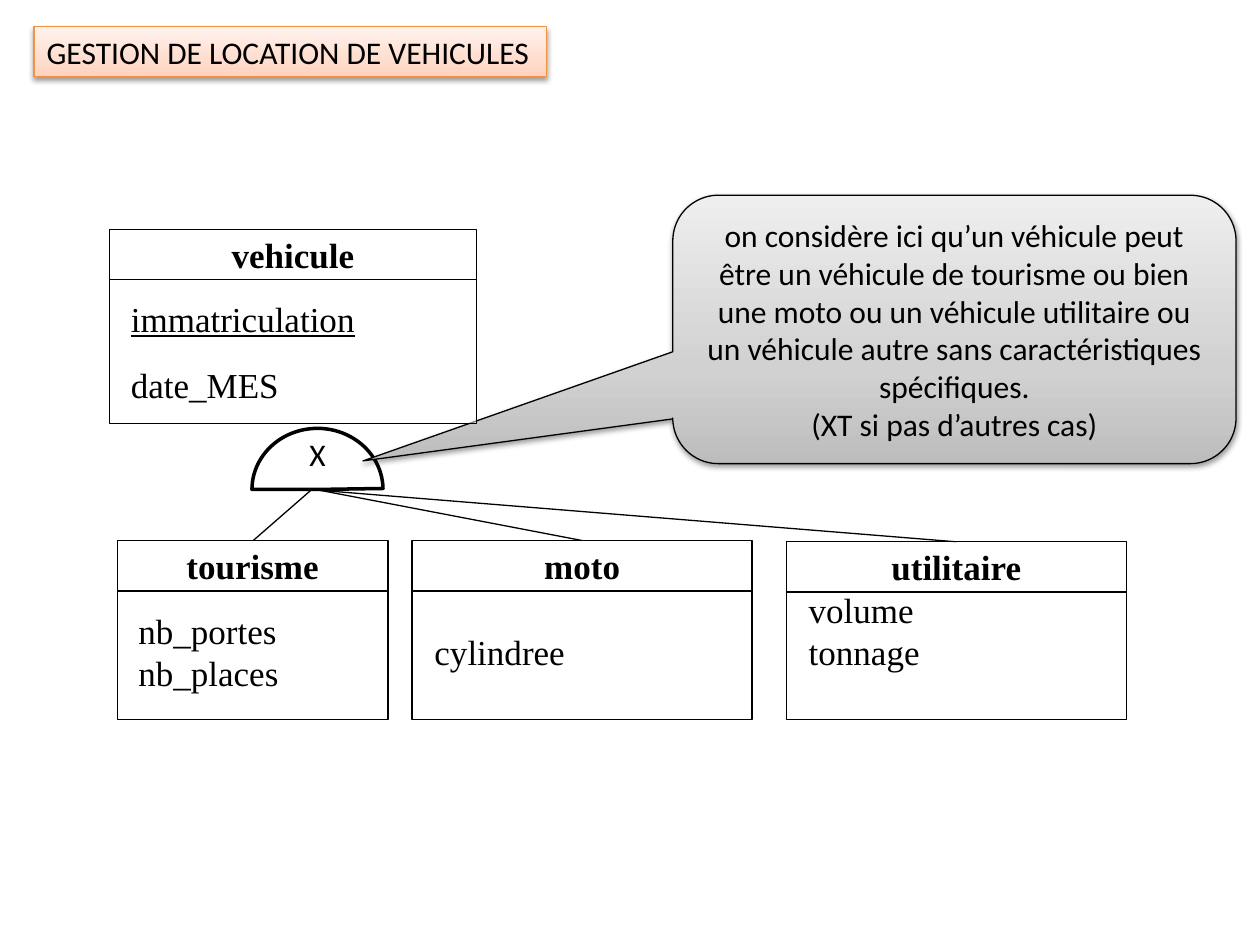
import copy
import lxml.etree
import pptx
import pptx.dml.color
import pptx.enum.shapes
import pptx.enum.text
import pptx.oxml.ns
import pptx.util

Inches, Pt = pptx.util.Inches, pptx.util.Pt
Kind = pptx.enum.shapes.MSO_SHAPE
Align = pptx.enum.text.PP_ALIGN
Anchor = pptx.enum.text.MSO_ANCHOR
qn = pptx.oxml.ns.qn

TITLE = "GESTION DE LOCATION DE VEHICULES"
NOTE = (
    "on considère ici qu’un véhicule peut être un véhicule de tourisme ou bien "
    "une moto ou un véhicule utilitaire ou un véhicule autre sans "
    "caractéristiques spécifiques.\n(XT si pas d’autres cas)"
)
HEAD, ROW = 0.4, 0.33
ENTITIES = [
    ("vehicule", (0.87, 1.82, 2.91, 1.54),
     [("immatriculation", 0.94, 2.29, 2.76, 0.47, 0),
      ("date_MES", 0.94, 2.82, 2.76, 0.47, 0)]),
    ("tourisme", (0.93, 4.29, 2.15, 1.42),
     [("nb_portes\nnb_places", 1, 4.99, 2.04, 0.69, 1)]),
    ("moto", (3.27, 4.29, 2.7, 1.42),
     [("cylindree", 3.35, 4.99, 2.56, 0.69, 1)]),
    ("utilitaire", (6.24, 4.3, 2.7, 1.41),
     [("volume\ntonnage", 6.32, 4.99, 2.56, 0.69, 2)]),
]
KEY = "immatriculation"
LINKS = [(2.48, 3.88, 2.01, 4.29), (2.48, 3.88, 4.62, 4.29), (2.52, 3.89, 7.59, 4.3)]
GRAY = [(0, "BDBDBD"), (0.35, "D1D1D1"), (1, "EEEEEE")]
PEACH = [(0, "FFD2BD"), (0.35, "FFDED0"), (1, "FFF2ED")]


def color(code):
    return pptx.dml.color.RGBColor.from_string(code)


def edge(shape, code="000000", width=0.75):
    shape.line.color.rgb = color(code)
    shape.line.width = Pt(width)


def paint(shape, alpha=None):
    shape.fill.solid()
    shape.fill.fore_color.rgb = color("FFFFFF")
    if alpha:
        tint = shape.fill._xPr.find(".//" + qn("a:srgbClr"))
        lxml.etree.SubElement(tint, qn("a:alpha"), val=str(alpha * 1000))


def blend(shape, stops):
    shape.fill.gradient()
    shape.fill.gradient_angle = 90
    first = shape._element.spPr.find(".//" + qn("a:gs"))
    first.addnext(copy.deepcopy(first))
    for stop, (place, code) in zip(shape.fill.gradient_stops, stops):
        stop.position = place
        stop.color.rgb = color(code)


def shade(shape):
    shape.shadow.inherit = False
    effects = shape._element.spPr.find(qn("a:effectLst"))
    outer = lxml.etree.SubElement(
        effects, qn("a:outerShdw"), blurRad="40000", dist="20000",
        dir="5400000", rotWithShape="0")
    tint = lxml.etree.SubElement(outer, qn("a:srgbClr"), val="000000")
    lxml.etree.SubElement(tint, qn("a:alpha"), val="38000")


def write(shape, text, font="Calibri", size=18, align=Align.CENTER,
          anchor=Anchor.MIDDLE, wrap=True, bold=False):
    frame = shape.text_frame
    frame.text = text
    frame.word_wrap = wrap
    frame.vertical_anchor = anchor
    for para in frame.paragraphs:
        para.alignment = align
        for run in para.runs:
            run.font.name = font
            run.font.size = Pt(size)
            run.font.bold = bold
            run.font.underline = text == KEY
            run.font.color.rgb = color("000000")


def add(parent, kind, *box):
    shape = parent.add_shape(kind, *map(Inches, box))
    shape.shadow.inherit = False
    return shape


def entity(shapes, name, box, labels):
    left, top, width, height = box
    group = shapes.add_group_shape().shapes
    body = add(group, Kind.RECTANGLE, left, top + HEAD, width, height - HEAD)
    head = add(group, Kind.RECTANGLE, left, top, width, HEAD)
    for part in (body, head):
        paint(part, 50)
        edge(part)
    write(head, name, "Times New Roman", 20, wrap=False, bold=True)
    for text, *place, blank in labels:
        label = add(group, Kind.RECTANGLE, *place)
        paint(label, 50)
        label.line.fill.background()
        write(label, text, "Times New Roman", 20, Align.LEFT, wrap=False)
        label.text_frame.margin_top = 0
        label.text_frame.margin_bottom = Inches(ROW * blank)


def main():
    deck = pptx.Presentation()
    deck.slide_width, deck.slide_height = Inches(10), Inches(7.5)
    slide = deck.slides.add_slide(deck.slide_layouts[5])
    shapes = slide.shapes

    title = shapes.title
    title.left, title.top, title.width, title.height = map(
        Inches, (0.27, 0.21, 4.07, 0.4))
    blend(title, PEACH)
    edge(title, "F69240")
    shade(title)
    write(title, TITLE, align=Align.LEFT, anchor=Anchor.TOP, wrap=False)

    for ends in LINKS:
        link = shapes.add_connector(
            pptx.enum.shapes.MSO_CONNECTOR.STRAIGHT, *map(Inches, ends))
        edge(link)
        lxml.etree.SubElement(link._element.spPr, qn("a:effectLst"))

    pie = add(shapes, Kind.PIE, 2, 3.4, 1.04, 0.97)
    pie.adjustments[0], pie.adjustments[1] = 108, 215.48
    paint(pie)
    edge(pie, width=2)
    write(pie, "X", anchor=Anchor.TOP)

    note = add(shapes, Kind.ROUNDED_RECTANGULAR_CALLOUT, 5.34, 1.55, 4.47, 2.13)
    for spot, value in enumerate((-1.05, 0.49, 0.17)):
        note.adjustments[spot] = value
    blend(note, GRAY)
    edge(note)
    shade(note)
    write(note, NOTE)

    for item in ENTITIES:
        entity(shapes, *item)
    deck.save("out.pptx")


if __name__ == "__main__":
    main()
